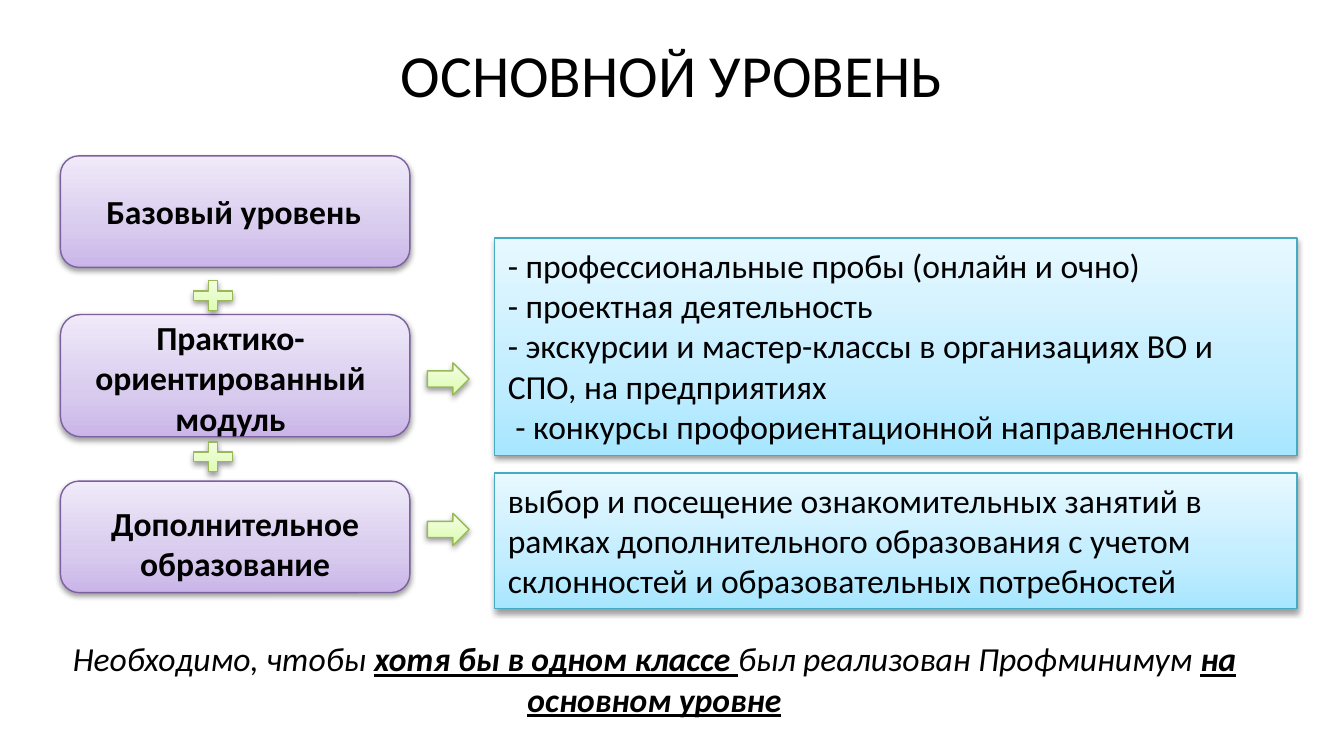
from copy import deepcopy

from lxml import etree
from pptx import Presentation
from pptx.dml.color import RGBColor
from pptx.enum.shapes import MSO_SHAPE
from pptx.enum.text import MSO_ANCHOR, MSO_AUTO_SIZE, PP_ALIGN
from pptx.oxml.ns import qn
from pptx.util import Inches, Pt

CARD, PANEL = MSO_SHAPE.ROUNDED_RECTANGLE, MSO_SHAPE.RECTANGLE
PLUS, ARROW = MSO_SHAPE.MATH_PLUS, MSO_SHAPE.RIGHT_ARROW
LEFT, CENTER = PP_ALIGN.LEFT, PP_ALIGN.CENTER
TOP = MSO_ANCHOR.TOP
NO_FIT, GROW = MSO_AUTO_SIZE.NONE, MSO_AUTO_SIZE.SHAPE_TO_FIT_TEXT

SLIDE_WIDTH = Inches(10)
SLIDE_HEIGHT = SLIDE_WIDTH * 9 // 16
FONT = "Calibri"
BLACK = RGBColor(0x00, 0x00, 0x00)
# Each palette: line colour, then gradient colours from bottom to top
PURPLE = (RGBColor(0x7D, 0x60, 0xA0), RGBColor(0xC9, 0xB5, 0xE8),
          RGBColor(0xD8, 0xCB, 0xEE), RGBColor(0xF0, 0xEA, 0xF9))
BLUE = (RGBColor(0x46, 0xAA, 0xC5), RGBColor(0xA7, 0xE6, 0xFF),
        RGBColor(0xC1, 0xED, 0xFF), RGBColor(0xE7, 0xF8, 0xFF))
GREEN = (RGBColor(0x98, 0xB9, 0x55), RGBColor(0xDA, 0xFD, 0xA7),
         RGBColor(0xE4, 0xFC, 0xC2), RGBColor(0xF5, 0xFF, 0xE7))
STOPS = (0, 0.35, 1)

# Content: text with its box (left, top, width, height)
TITLE = "ОСНОВНОЙ УРОВЕНЬ"
LEVELS = [  # card top, card height, label, label box
    (1.16, 0.83, "Базовый уровень", (0.63, 1.37, 2.22, 0.4)),
    (2.34, 0.91, "Практико-ориентированный модуль", (0.44, 2.31, 2.55, 1.01)),
    (3.58, 0.83, "Дополнительное образование", (0.65, 3.69, 2.2, 0.71)),
]
DETAILS = [  # panel top, panel height, paragraphs
    (1.77, 1.62, ["- профессиональные пробы (онлайн и очно)",
                  "- проектная деятельность",
                  "- экскурсии и мастер-классы в организациях ВО и СПО, на предприятиях",
                  " - конкурсы профориентационной направленности"]),
    (3.52, 1.01, ["выбор и посещение ознакомительных занятий в рамках дополнительного "
                  "образования с учетом склонностей и образовательных потребностей"]),
]
PLUS_TOPS = (2.05, 3.25)
ARROW_TOPS = (2.7, 3.82)
NOTE = [  # text, emphasised
    ("Необходимо, чтобы ", False),
    ("хотя бы в одном классе ", True),
    ("был реализован Профминимум ", False),
    ("на основном уровне", True),
]


def style_font(font, size=18, bold=False):
    font.name, font.size, font.bold = FONT, Pt(size), bold
    font.color.rgb = BLACK


def prepare_frame(shape):
    frame = shape.text_frame
    frame.word_wrap, frame.auto_size = True, GROW
    frame.vertical_anchor = TOP
    return frame


def write_paragraphs(shape, texts, alignment, bold=False):
    frame = prepare_frame(shape)
    frame.text = "\n".join(texts)
    for paragraph in frame.paragraphs:
        paragraph.alignment = alignment
        style_font(paragraph.font, bold=bold)


def add_shadow(shape):
    shape.shadow.inherit = False
    effects = shape._element.spPr.find(qn("a:effectLst"))
    shadow = etree.SubElement(effects, qn("a:outerShdw"), blurRad=str(Pt(3.1)),
                              dist=str(Pt(1.6)), dir="5400000", rotWithShape="0")
    color = etree.SubElement(shadow, qn("a:srgbClr"), val=str(BLACK))
    etree.SubElement(color, qn("a:alpha"), val="38000")


def add_glossy(slide, kind, box, palette):
    shape = slide.shapes.add_shape(kind, *map(Inches, box))
    line_color, *colors = palette
    shape.fill.gradient()
    shape.fill.gradient_angle = 90
    stop_list = shape._element.xpath(".//a:gsLst")[0]
    stop_list.append(deepcopy(stop_list[0]))
    for stop, position, color in zip(shape.fill.gradient_stops, STOPS, colors):
        stop.position = position
        stop.color.rgb = color
    shape.line.color.rgb = line_color
    shape.line.width = Pt(0.75)
    add_shadow(shape)
    return shape


def main():
    presentation = Presentation()
    presentation.slide_width = SLIDE_WIDTH
    presentation.slide_height = SLIDE_HEIGHT
    slide = presentation.slides.add_slide(presentation.slide_layouts[5])

    # Title
    title = slide.shapes.title
    title.left, title.top, title.width, title.height = map(Inches, (0.5, 0.23, 9, 0.52))
    title.text_frame.text = TITLE
    title.text_frame.vertical_anchor = TOP
    title.text_frame.auto_size = NO_FIT
    title.text_frame.paragraphs[0].alignment = CENTER
    style_font(title.text_frame.paragraphs[0].font, size=32)

    # Level cards with their labels
    for top, height, label, label_box in LEVELS:
        add_glossy(slide, CARD, (0.45, top, 2.6, height), PURPLE)
        text_box = slide.shapes.add_textbox(*map(Inches, label_box))
        write_paragraphs(text_box, [label], CENTER, bold=True)

    # Detail panels
    for top, height, texts in DETAILS:
        panel = add_glossy(slide, PANEL, (3.68, top, 5.97, height), BLUE)
        write_paragraphs(panel, texts, LEFT)

    # Plus signs between cards, arrows towards panels
    for top in PLUS_TOPS:
        add_glossy(slide, PLUS, (1.39, top, 0.39, 0.3), GREEN)
    for top in ARROW_TOPS:
        add_glossy(slide, ARROW, (3.18, top, 0.31, 0.24), GREEN)

    # Closing note
    note = slide.shapes.add_textbox(*map(Inches, (0.44, 4.7, 8.86, 0.71)))
    paragraph = prepare_frame(note).paragraphs[0]
    paragraph.alignment = CENTER
    for text, emphasised in NOTE:
        run = paragraph.add_run()
        run.text = text
        style_font(run.font, bold=emphasised)
        run.font.italic, run.font.underline = True, emphasised

    presentation.save("out.pptx")


if __name__ == "__main__":
    main()
